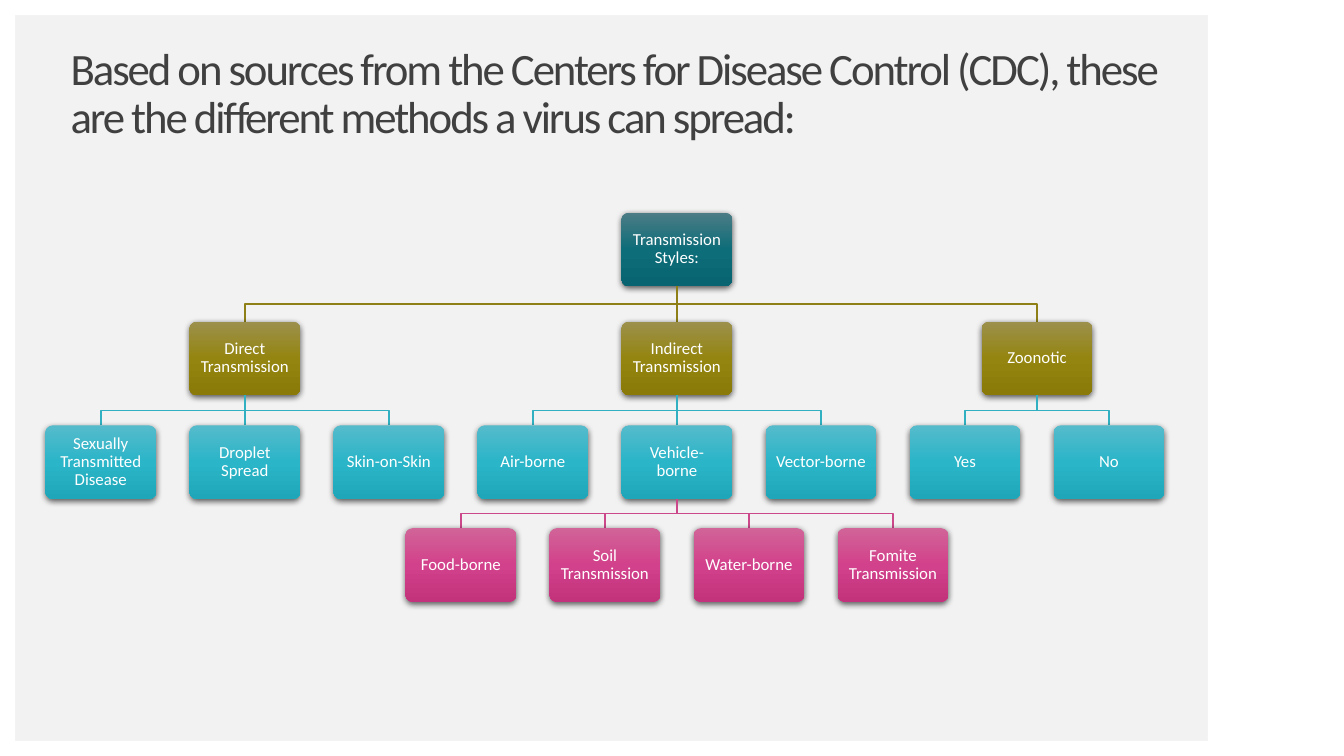
import copy
import dataclasses

import pptx
import pptx.dml.color
import pptx.enum.shapes
import pptx.enum.text
import pptx.oxml
import pptx.oxml.ns
import pptx.util

Inches = pptx.util.Inches
Pt = pptx.util.Pt


@dataclasses.dataclass(frozen=True)
class Theme:
    font: str = "Calibri"
    title_size: int = 32
    box_size: int = 12
    background: str = "F2F2F2"
    frame: str = "FFFFFF"
    title_text: str = "404040"
    box_text: str = "FFFFFF"
    # One gradient per level of the tree, and the line leading into it
    gradients: tuple = (
        ("4C7C85", "0D6D79", "076470"),
        ("9C904D", "948510", "897A09"),
        ("55BBCB", "2AB5C8", "1FA6B8"),
        ("D16498", "D2418B", "C2337C"),
    )
    branch_lines: tuple = (None, "8E8016", "31B0C1", "CB488B")


THEME = Theme()

# Tree geometry in inches; columns are counted from the leftmost box
BOX_W, BOX_H = 1.1, 0.73
FIRST_CENTER, PITCH = 1.0, 10 / 7
LEVEL_TOPS = (2.11, 3.19, 4.22, 5.24)

TITLE = ("Based on sources from the Centers for Disease Control (CDC), these "
         "are the different methods a virus can spread:")

# Each style: label, column, methods with their own sub-methods
ROOT_LABEL, ROOT_COLUMN = "Transmission Styles:", 4
STYLES = [
    ("Direct Transmission", 1, {
        "Sexually Transmitted Disease": [], "Droplet Spread": [], "Skin-on-Skin": []}),
    ("Indirect Transmission", 4, {
        "Air-borne": [],
        "Vehicle-borne": ["Food-borne", "Soil Transmission", "Water-borne",
                          "Fomite Transmission"],
        "Vector-borne": []}),
    ("Zoonotic", 6.5, {"Yes": [], "No": []}),
]

SHADOW_XML = (
    f'<a:effectLst {pptx.oxml.ns.nsdecls("a")}>'
    '<a:outerShdw blurRad="57150" dist="19050" dir="5400000" algn="ctr" rotWithShape="0">'
    '<a:srgbClr val="000000"><a:alpha val="63000"/></a:srgbClr>'
    '</a:outerShdw></a:effectLst>')


def rgb(code):
    return pptx.dml.color.RGBColor.from_string(code)


def center_x(column):
    return FIRST_CENTER + PITCH * column


def style_paragraph(paragraph, size, color):
    paragraph.line_spacing = 0.9
    paragraph.font.name = THEME.font
    paragraph.font.size = Pt(size)
    paragraph.font.color.rgb = rgb(color)


def add_band(slide, left, top, width, height):
    band = slide.shapes.add_shape(pptx.enum.shapes.MSO_SHAPE.RECTANGLE,
                                  Inches(left), Inches(top), Inches(width), Inches(height))
    band.shadow.inherit = False
    band.fill.solid()
    band.fill.fore_color.rgb = rgb(THEME.frame)
    band.line.fill.background()


def add_title(slide):
    title = slide.shapes.title
    title.left, title.top = Inches(0.7), Inches(0.71)
    title.width, title.height = Inches(11.09), Inches(0.47)
    frame = title.text_frame
    frame.text = TITLE
    frame.word_wrap = True
    frame.auto_size = pptx.enum.text.MSO_AUTO_SIZE.NONE
    frame.vertical_anchor = pptx.enum.text.MSO_ANCHOR.MIDDLE
    frame.margin_left = frame.margin_right = frame.margin_top = frame.margin_bottom = 0
    heading = frame.paragraphs[0]
    heading.alignment = pptx.enum.text.PP_ALIGN.LEFT
    style_paragraph(heading, THEME.title_size, THEME.title_text)
    # Tight letter spacing, in hundredths of a point
    heading.runs[0]._r.get_or_add_rPr().set("spc", "-150")


def fill_gradient(box, colors):
    box.fill.gradient()
    box.fill.gradient_angle = 270
    first_stop = box._element.spPr.find(".//" + pptx.oxml.ns.qn("a:gs"))
    first_stop.addnext(copy.deepcopy(first_stop))
    for stop, position, color in zip(box.fill.gradient_stops, (0, 0.5, 1), colors):
        stop.position = position
        stop.color.rgb = rgb(color)


def add_box(slide, label, column, level):
    box = slide.shapes.add_shape(
        pptx.enum.shapes.MSO_SHAPE.ROUNDED_RECTANGLE,
        Inches(center_x(column) - BOX_W / 2), Inches(LEVEL_TOPS[level]),
        Inches(BOX_W), Inches(BOX_H))
    box.adjustments[0] = 0.1
    fill_gradient(box, THEME.gradients[level])
    box.line.fill.background()
    box._element.spPr.append(pptx.oxml.parse_xml(SHADOW_XML))

    frame = box.text_frame
    frame.text = label
    frame.word_wrap = True
    frame.vertical_anchor = pptx.enum.text.MSO_ANCHOR.MIDDLE
    frame.margin_left = frame.margin_right = Inches(0.06)
    frame.margin_top = frame.margin_bottom = Inches(0.06)
    frame.paragraphs[0].alignment = pptx.enum.text.PP_ALIGN.CENTER
    style_paragraph(frame.paragraphs[0], THEME.box_size, THEME.box_text)


def add_branch(slide, parent_column, column, level):
    start_x, end_x = Inches(center_x(parent_column)), Inches(center_x(column))
    start_y = Inches(LEVEL_TOPS[level - 1] + BOX_H)
    end_y = Inches(LEVEL_TOPS[level])
    if start_x == end_x:
        branch = slide.shapes.add_connector(
            pptx.enum.shapes.MSO_CONNECTOR.STRAIGHT, start_x, start_y, end_x, end_y)
        branch._element.spPr.append(pptx.oxml.parse_xml(
            f'<a:effectLst {pptx.oxml.ns.nsdecls("a")}/>'))
    else:
        bend_y = (start_y + end_y) // 2
        outline = slide.shapes.build_freeform(start_x, start_y)
        outline.add_line_segments(
            [(start_x, bend_y), (end_x, bend_y), (end_x, end_y)], close=False)
        branch = outline.convert_to_shape()
        branch.shadow.inherit = False
        branch.fill.background()
    branch.line.color.rgb = rgb(THEME.branch_lines[level])
    branch.line.width = Pt(1)


def add_child(slide, label, parent_column, column, level):
    add_branch(slide, parent_column, column, level)
    add_box(slide, label, column, level)


def fan_out(labels, parent_column):
    """Pair labels with neighbouring columns centred below their parent."""
    first = parent_column - (len(labels) - 1) / 2
    return [(label, first + i) for i, label in enumerate(labels)]


def add_tree(slide):
    add_box(slide, ROOT_LABEL, ROOT_COLUMN, 0)
    for style, style_column, methods in STYLES:
        add_child(slide, style, ROOT_COLUMN, style_column, 1)
        for method, method_column in fan_out(methods, style_column):
            add_child(slide, method, style_column, method_column, 2)
            for route, route_column in fan_out(methods[method], method_column):
                add_child(slide, route, method_column, route_column, 3)


def main():
    deck = pptx.Presentation()
    deck.slide_width, deck.slide_height = Inches(13.33), Inches(7.5)
    slide = deck.slides.add_slide(deck.slide_layouts[5])
    slide.background.fill.solid()
    slide.background.fill.fore_color.rgb = rgb(THEME.background)

    # White frame around the grey panel
    add_band(slide, 0, 0, 13.33, 0.15)
    add_band(slide, 0, 0, 0.15, 7.5)
    add_band(slide, 11.98, 0, 1.35, 7.5)
    add_band(slide, 0, 7.35, 13.33, 0.15)

    add_title(slide)
    add_tree(slide)
    deck.save("out.pptx")


if __name__ == "__main__":
    main()
